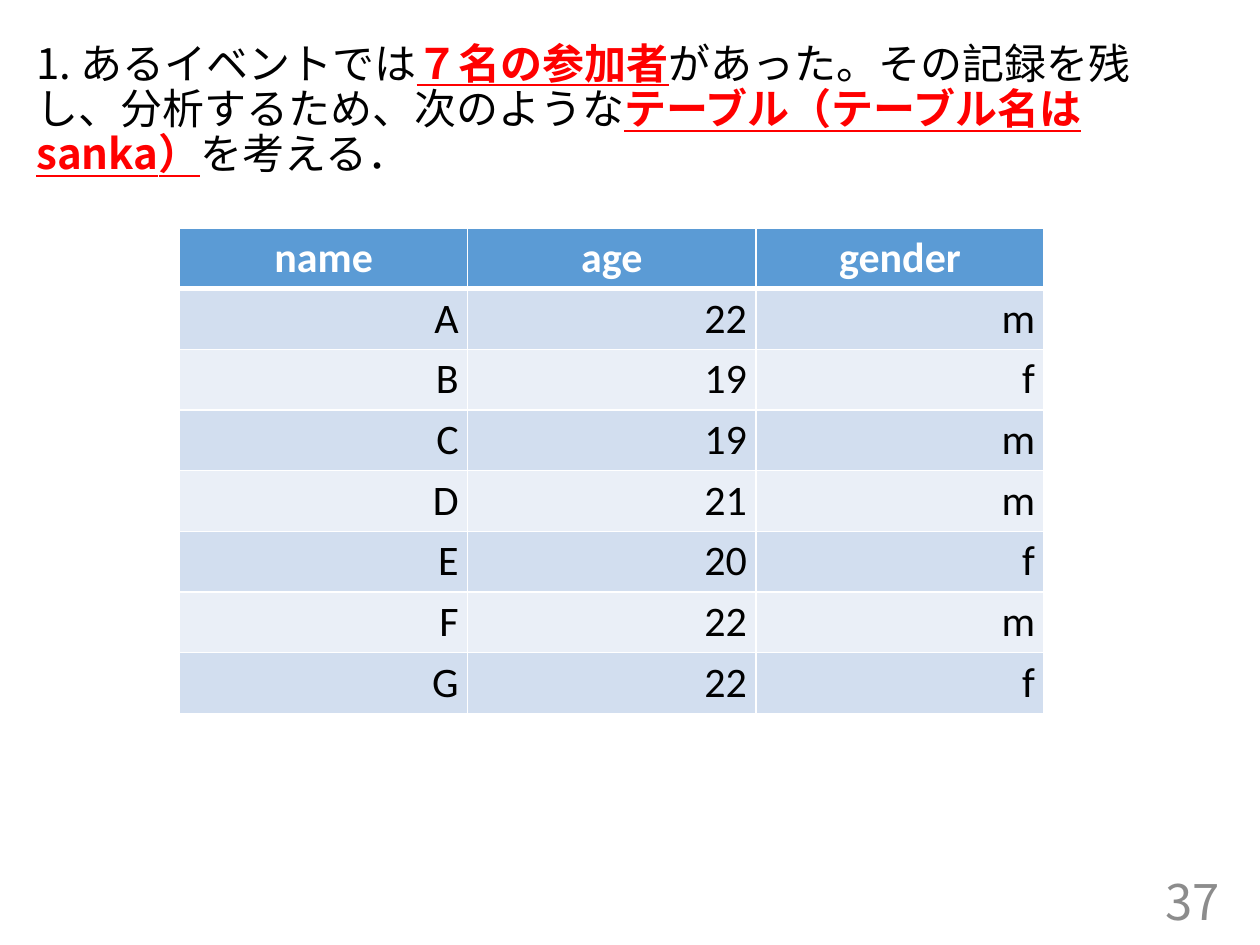
from lxml.etree import SubElement
from pptx import Presentation
from pptx.dml.color import RGBColor
from pptx.enum.text import MSO_ANCHOR as Anchor, PP_ALIGN as Align
from pptx.oxml.ns import qn
from pptx.util import Pt

BLACK = RGBColor(0x00, 0x00, 0x00)
WHITE = RGBColor(0xFF, 0xFF, 0xFF)
RED = RGBColor(0xFF, 0x00, 0x00)
GRAY = RGBColor(0x8C, 0x8C, 0x8C)
HEADER_BLUE = RGBColor(0x5B, 0x9B, 0xD5)
BANDS = RGBColor(0xD2, 0xDE, 0xEF), RGBColor(0xEA, 0xEF, 0xF7)

QUESTION = [
    ("1. あるイベントでは", False),
    ("７名の参加者", True),
    ("があった。その記録を残し、分析するため、次のような", False),
    ("テーブル（テーブル名は sanka）", True),
    ("を考える．", False),
]
PARTICIPANTS = [
    ("name", "age", "gender"),
    ("A", "22", "m"),
    ("B", "19", "f"),
    ("C", "19", "m"),
    ("D", "21", "m"),
    ("E", "20", "f"),
    ("F", "22", "m"),
    ("G", "22", "f"),
]


class SlideBuilder:
    text_font = "Noto Sans CJK JP"
    table_font = "Calibri"
    body_size = 24

    def __init__(self, slide):
        self.slide = slide

    def style(self, run, font_name, size, color, bold=False):
        font = run.font
        font.name, font.size, font.bold = font_name, Pt(size), bold
        font.color.rgb = color
        SubElement(font._element, qn("a:ea"), typeface=font_name)

    def frame(self, left, top, width, height):
        box = self.slide.shapes.add_textbox(Pt(left), Pt(top), Pt(width), Pt(height))
        box.text_frame.word_wrap = True
        return box.text_frame

    def question(self, parts, left, top, width, height):
        """Add a paragraph of (wording, is_key) parts, key parts red and underlined."""
        paragraph = self.frame(left, top, width, height).paragraphs[0]
        paragraph.line_spacing = 0.9
        paragraph.space_before = Pt(3)
        for wording, is_key in parts:
            run = paragraph.add_run()
            run.text = wording
            self.style(run, self.text_font, self.body_size, RED if is_key else BLACK, is_key)
            run.font.underline = is_key

    def page_number(self, number, left, top, width, height):
        frame = self.frame(left, top, width, height)
        frame.vertical_anchor = Anchor.MIDDLE
        paragraph = frame.paragraphs[0]
        paragraph.text = str(number)
        paragraph.alignment = Align.RIGHT
        self.style(paragraph.runs[0], self.text_font, 28, GRAY)

    def borders(self, cell, bottom_width):
        """Draw white cell borders; they must precede the fill in the XML."""
        properties = cell._tc.get_or_add_tcPr()
        for side, width in (("L", 1), ("R", 1), ("T", 1), ("B", bottom_width)):
            line = SubElement(properties, qn(f"a:ln{side}"), w=str(Pt(width)))
            solid = SubElement(line, qn("a:solidFill"))
            SubElement(solid, qn("a:srgbClr"), val=str(WHITE))

    def table(self, records, left, top, width, height):
        table = self.slide.shapes.add_table(
            len(records), len(records[0]), Pt(left), Pt(top), Pt(width), Pt(height)
        ).table
        for row, record in enumerate(records):
            is_header = row == 0
            for column, value in enumerate(record):
                cell = table.cell(row, column)
                self.borders(cell, 3 if is_header else 1)
                cell.fill.solid()
                cell.fill.fore_color.rgb = HEADER_BLUE if is_header else BANDS[(row - 1) % 2]
                cell.margin_left = cell.margin_right = Pt(5.2)
                cell.margin_top = cell.margin_bottom = Pt(2.6)
                paragraph = cell.text_frame.paragraphs[0]
                paragraph.text = value
                paragraph.alignment = Align.CENTER if is_header else Align.RIGHT
                self.style(paragraph.runs[0], self.table_font, self.body_size,
                           WHITE if is_header else BLACK, is_header)


def main():
    deck = Presentation()
    deck.slide_width, deck.slide_height = Pt(720), Pt(540)
    builder = SlideBuilder(deck.slides.add_slide(deck.slide_layouts[6]))
    builder.question(QUESTION, 13.7, 20.9, 660.2, 108.7)
    builder.page_number(37, 542.2, 500.4, 162, 28.8)
    builder.table(PARTICIPANTS, 102.6, 130.3, 494, 277.4)
    deck.save("out.pptx")


if __name__ == "__main__":
    main()
